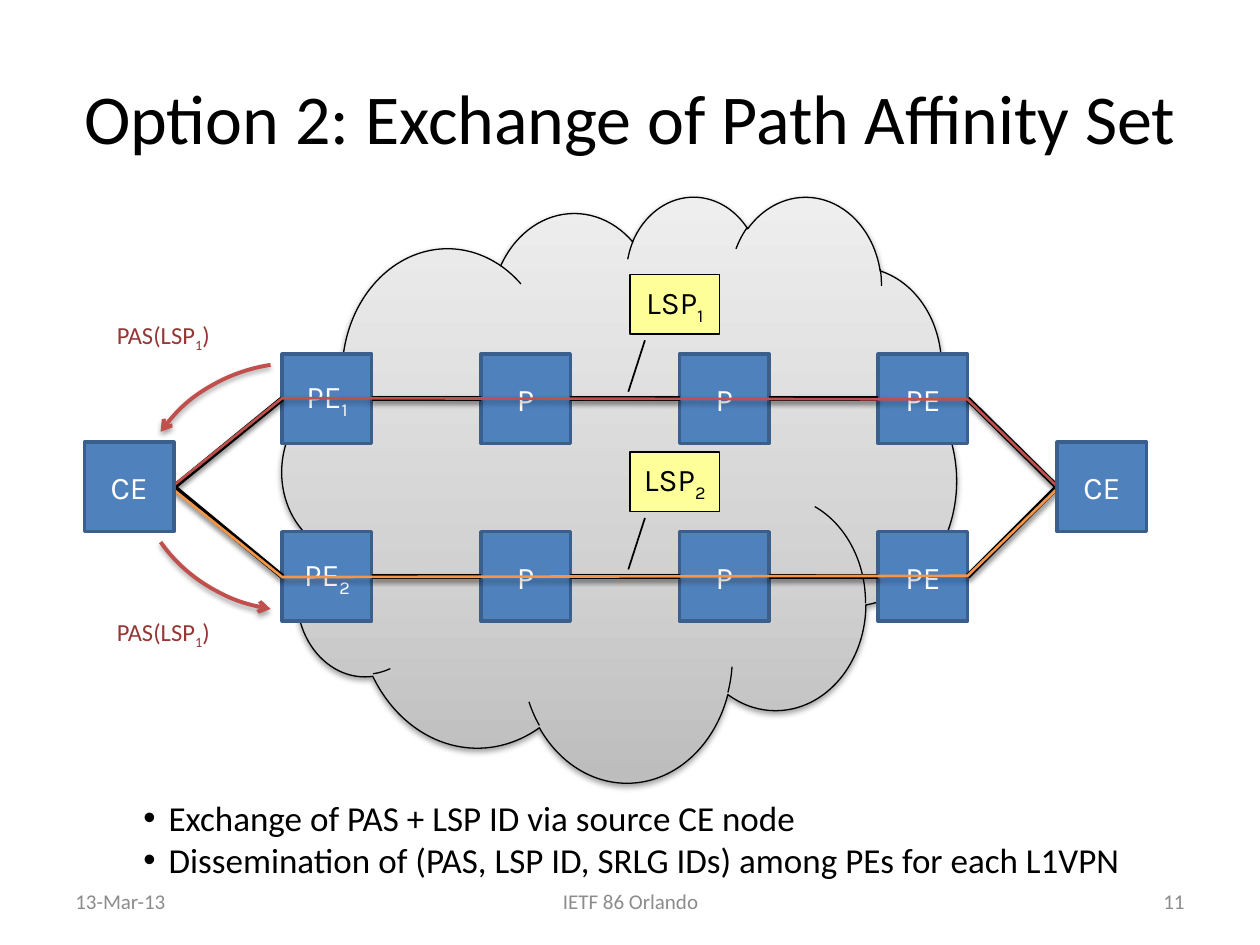
"""Build a slide on the exchange of path affinity sets."""
from dataclasses import dataclass

from lxml import etree
from pptx import Presentation
from pptx.dml.color import RGBColor
from pptx.enum.shapes import MSO_CONNECTOR, MSO_SHAPE
from pptx.enum.text import MSO_ANCHOR, PP_ALIGN
from pptx.oxml.ns import qn
from pptx.util import Inches, Pt

RECT, CLOUD, ARC = MSO_SHAPE.RECTANGLE, MSO_SHAPE.CLOUD, MSO_SHAPE.ARC
CALL, LINE = MSO_SHAPE.LINE_CALLOUT_1, MSO_CONNECTOR.STRAIGHT
MID, TOP = MSO_ANCHOR.MIDDLE, MSO_ANCHOR.TOP
LEFT, MIDDLE, RIGHT = PP_ALIGN.LEFT, PP_ALIGN.CENTER, PP_ALIGN.RIGHT


@dataclass(frozen=True)
class Theme:
    """Colours, fonts and type sizes."""
    ink: str = "000000"
    white: str = "FFFFFF"
    blue: str = "4F81BD"
    edge: str = "3A5F8C"
    red: str = "C0504D"
    wine: str = "953735"
    gold: str = "F79646"
    note: str = "FFFF99"
    grey: str = "8C8C8C"
    cloud: tuple = ((0, "BDBDBD"), (35, "D1D1D1"), (100, "EEEEEE"))
    sans: str = "Calibri"
    label: str = "Karla"
    head: int = 40
    body: int = 20
    node: int = 18
    tag: int = 14
    foot: int = 12


T = Theme()


def rgb(code):
    """Turn a hex code into a colour."""
    return RGBColor.from_string(code)


def add(parent, tag, **attrs):
    """Append a drawing element with attributes."""
    item = etree.SubElement(parent, qn("a:" + tag))
    for key, value in attrs.items():
        item.set(key, str(value))
    return item


def place(x, y, w, h):
    """Convert a box to lengths."""
    return Inches(x), Inches(y), Inches(w), Inches(h)


def stroke(shape, color, width):
    """Set the outline of a shape."""
    shape.line.color.rgb = rgb(color)
    shape.line.width = Pt(width)


def shade(shape, alpha, dist):
    """Give a shape a soft shadow below."""
    props = shape._element.spPr
    effect = props.find(qn("a:effectLst"))
    if effect is None:
        effect = add(props, "effectLst")
    glow = add(effect, "outerShdw", blurRad=Pt(3.1), dist=Pt(dist),
               dir=90 * 60000, rotWithShape=0)
    add(add(glow, "srgbClr", val=T.ink), "alpha", val=alpha * 1000)


def write(para, parts, size, color, font, align=LEFT):
    """Add text runs; odd ones are subscripts."""
    para.alignment = align
    for i, part in enumerate(parts):
        run = para.add_run()
        run.text = part
        run.font.size, run.font.name = Pt(size), font
        run.font.color.rgb = rgb(color)
        if i % 2:
            run.font._element.set("baseline", "-25000")


def text(slide, box, parts, size, color, align=LEFT, anchor=MID):
    """Place a text box with one paragraph."""
    frame = slide.shapes.add_textbox(*place(*box)).text_frame
    frame.word_wrap, frame.vertical_anchor = True, anchor
    write(frame.paragraphs[0], parts, size, color, T.sans, align)


def form(slide, kind, box, color, width):
    """Place a plain preset shape."""
    shape = slide.shapes.add_shape(kind, *place(*box))
    shape.shadow.inherit = False
    stroke(shape, color, width)
    return shape


def block(slide, kind, box, parts, fill, edge, width, color):
    """Place a filled shape with a centred label."""
    shape = form(slide, kind, box, edge, width)
    shape.fill.solid()
    shape.fill.fore_color.rgb = rgb(fill)
    frame = shape.text_frame
    frame.margin_left = frame.margin_right = 0
    frame.vertical_anchor = MID
    write(frame.paragraphs[0], parts, T.node, color, T.label, MIDDLE)
    return shape


def node(slide, x, y, parts):
    """Place a square network node."""
    return block(slide, RECT, (x, y, 0.71, 0.71), parts,
                 T.blue, T.edge, 2, T.white)


def cloud(slide, box):
    """Place the shaded cloud."""
    shape = form(slide, CLOUD, box, T.ink, 0.75)
    shape.fill.gradient()
    shape.fill.gradient_angle = 90
    stops = shape._element.spPr.find(".//" + qn("a:gsLst"))
    for stop in list(stops):
        stops.remove(stop)
    for pos, color in T.cloud:
        add(add(stops, "gs", pos=pos * 1000), "srgbClr", val=color)
    shade(shape, 38, 1.6)


def link(slide, start, end):
    """Join the right side of one node to the left of the next."""
    line = slide.shapes.add_connector(LINE, 0, 0, 0, 0)
    line.begin_connect(start, 3)
    line.end_connect(end, 1)
    stroke(line, T.ink, 3)
    shade(line, 35, 1.8)


def route(slide, points, color):
    """Draw a signal route through points."""
    first, *rest = [(Inches(x), Inches(y)) for x, y in points]
    pen = slide.shapes.build_freeform(*first)
    pen.add_line_segments(rest, close=False)
    shape = pen.convert_to_shape()
    shape.shadow.inherit = False
    shape.fill.background()
    stroke(shape, color, 1.5)
    shade(shape, 38, 1.6)


def swing(slide, box, tip, flip):
    """Draw a curved arrow."""
    arc = form(slide, ARC, box, T.red, 2.25)
    arc.fill.background()
    arc.adjustments[0], arc.adjustments[1] = 127.095, 156.012
    if flip:
        arc._element.spPr.find(qn("a:xfrm")).set("flipV", "1")
    add(arc.line._ln, tip, type="arrow")
    shade(arc, 35, 1.8)


def network(slide, box):
    """Draw the cloud, its nodes, links, routes and labels."""
    x, y, w, h = box
    cloud(slide, (x + 1.57, y, 5.35, h))
    rows = []
    for top, num in ((1.26, "1"), (2.67, "2")):
        names = (("PE", num), ("P",), ("P",), ("PE",))
        rows.append([node(slide, x + 1.57 + i * 4.73 / 3, y + top, name)
                     for i, name in enumerate(names)])
    ends = [node(slide, left, y + 1.96, ("CE",)) for left in (x, x + w - 0.71)]
    for row in rows:
        chain = [ends[0], *row, ends[1]]
        for start, end in zip(chain, chain[1:]):
            link(slide, start, end)
    bends = ((0.7, 2.31), (1.57, 1.61), (7.01, 1.62), (7.74, 2.33))
    route(slide, [(x + a, y + b) for a, b in bends], T.red)
    route(slide, [(x + a, y + 4.64 - b) for a, b in bends], T.gold)
    for end in ends:
        slide.shapes._spTree.append(end._element)
    for top, num in ((0.63, "1"), (2.04, "2")):
        call = block(slide, CALL, (x + 4.33, y + top, 0.71, 0.47),
                     ("LSP", num), T.note, T.ink, 1, T.ink)
        for i, value in enumerate((1.109, 0.167, 1.978, -0.019)):
            call.adjustments[i] = value
    for top, tip, flip, tag in ((1.33, "headEnd", False, 0.94),
                                (0.86, "tailEnd", True, 3.3)):
        swing(slide, (x + 0.39, y + top, 2.6, 2.44), tip, flip)
        text(slide, (x + 0.16, y + tag, 1.42, 0.34), ("PAS(LSP", "1", ")"),
             T.tag, T.wine, anchor=TOP)


def points(slide, box, lines):
    """Place a bulleted list."""
    frame = slide.shapes.add_textbox(*place(*box)).text_frame
    frame.word_wrap = True
    for i, line in enumerate(lines):
        para = frame.add_paragraph() if i else frame.paragraphs[0]
        props = para._p.get_or_add_pPr()
        props.set("marL", str(Inches(0.49)))
        props.set("indent", str(Inches(-0.2)))
        add(props, "buFont", typeface="Arial")
        add(props, "buChar", char="•")
        write(para, (line,), T.body, T.ink, T.sans)


def footer(slide, box):
    """Place the date, event and page number."""
    x, y, w, h = box
    for left, wide, part, align in ((w - 2.33, 2.33, "11", RIGHT),
                                    (0, 2.33, "13-Mar-13", LEFT),
                                    (2.92, 3.17, "IETF 86 Orlando", MIDDLE)):
        text(slide, (x + left, y, wide, h), (part,), T.foot, T.grey, align)


def main():
    """Build and save the slide."""
    deck = Presentation()
    deck.slide_width, deck.slide_height = Inches(10), Inches(7.5)
    slide = deck.slides.add_slide(deck.slide_layouts[6])
    text(slide, (0.5, 0.3, 9, 1.25),
         ("Option 2: Exchange of Path Affinity Set",), T.head, T.ink, MIDDLE)
    network(slide, (0.67, 1.55, 8.43, 4.65))
    points(slide, (0.75, 6.27, 8.5, 0.77), (
        "Exchange of PAS + LSP ID via source CE node",
        "Dissemination of (PAS, LSP ID, SRLG IDs) among PEs for each L1VPN"))
    footer(slide, (0.5, 6.95, 9, 0.4))
    deck.save("out.pptx")


if __name__ == "__main__":
    main()
